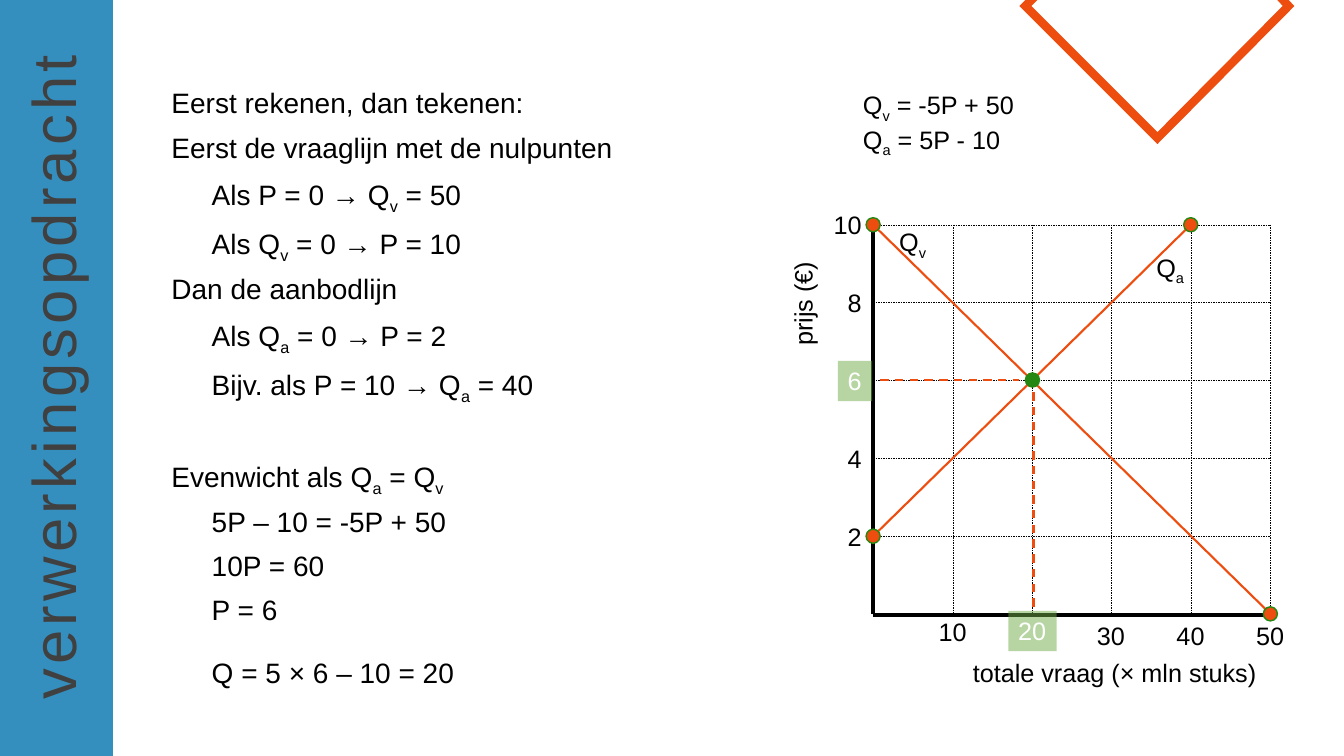
"""Build the slide that works out and draws a market equilibrium."""
from dataclasses import dataclass

from pptx import Presentation
from pptx import util as u
from pptx.dml.color import RGBColor
from pptx.enum import dml, shapes, text
from pptx.oxml.ns import qn
from lxml import etree

PX = 9144


@dataclass(frozen=True)
class Theme:
    """Colours, font and type sizes of the slide."""
    ink: str = "000000"
    title_ink: str = "404040"
    white: str = "FFFFFF"
    sidebar: str = "1A80B6"
    accent: str = "ED4D0F"
    green: str = "258812"
    highlight: str = "70AD47"
    font: str = "Arial"
    title_size: int = 44
    body_size: int = 20
    label_size: int = 18


THEME = Theme()

STEPS = [
    ("Eerst rekenen, dan tekenen:", 0, 10),
    ("Eerst de vraaglijn met de nulpunten", 0, 10),
    ("Als P = 0 → Q_v = 50", 40, 10),
    ("Als Q_v = 0 → P = 10", 40, 10),
    ("Dan de aanbodlijn", 0, 10),
    ("Als Q_a = 0 → P = 2", 40, 10),
    ("Bijv. als P = 10 → Q_a = 40", 40, 10),
    ("Evenwicht als Q_a = Q_v", 0, 41),
    ("5P – 10 = -5P + 50", 40, 10),
    ("10P = 60", 40, 10),
    ("P = 6", 40, 10),
    ("Q = 5 × 6 – 10 = 20", 40, 23),
]
QUANTITY_LABELS = [(10, 607), (30, 610), (40, 610), (50, 610)]
LEFT, BOTTOM = 866, 609


def px(value):
    """Turn px into EMU."""
    return u.Emu(value * PX)


def rgb(colour):
    """Turn a hex string into a colour."""
    return RGBColor.from_string(colour)


def quantity_x(quantity):
    """Return the horizontal place of a quantity."""
    return LEFT + round(quantity * 7.88)


def price_y(price):
    """Return the vertical place of a price."""
    return BOTTOM - round(price * 38.6)


def place(box, left, top, width, height):
    """Move and size a box."""
    box.left, box.top, box.width, box.height = map(px, (left, top, width, height))


def paint(shape, colour, opacity=100):
    """Fill a shape with a colour and drop its shadow."""
    shape.shadow.inherit = False
    shape.fill.solid()
    shape.fill.fore_color.rgb = rgb(colour)
    if opacity < 100:
        tint = shape.element.spPr.find(".//" + qn("a:srgbClr"))
        etree.SubElement(tint, qn("a:alpha")).set("val", str(opacity * 1000))


def add_spans(para, content, size, colour):
    """Write runs; the letter after an underscore becomes a subscript."""
    first, *others = content.split("_")
    pieces = [(first, False)]
    for other in others:
        pieces += [(other[0], True), (other[1:], False)]
    for piece, lowered in pieces:
        if piece:
            span = para.add_run()
            span.text = piece
            span.font.name, span.font.size = THEME.font, u.Pt(size)
            span.font.color.rgb = rgb(colour)
            if lowered:
                span.font._element.set("baseline", "-25000")


def write(box, lines, size=THEME.label_size, colour=THEME.ink, wrap=False):
    """Write left-aligned lines from the top of a box."""
    frame = box.text_frame
    frame.word_wrap = wrap
    frame.auto_size = text.MSO_AUTO_SIZE.NONE
    frame.vertical_anchor = text.MSO_ANCHOR.TOP
    for index, line in enumerate(lines):
        para = frame.add_paragraph() if index else frame.paragraphs[0]
        para.alignment = text.PP_ALIGN.LEFT
        add_spans(para, line, size, colour)
    return frame.paragraphs


def indent(para, margin):
    """Indent a paragraph without a bullet."""
    properties = para._p.get_or_add_pPr()
    properties.set("marL", str(px(margin)))
    properties.set("indent", "0")
    etree.SubElement(properties, qn("a:buNone"))


def add_label(page, content, bounds, rotation=0):
    """Add a one-line label."""
    box = page.shapes.add_textbox(*map(px, bounds))
    box.rotation = rotation
    write(box, [content])


def add_highlight(page, content, bounds):
    """Add a see-through box with a white value."""
    box = page.shapes.add_shape(shapes.MSO_SHAPE.RECTANGLE, *map(px, bounds))
    paint(box, THEME.highlight, 50)
    box.line.fill.background()
    write(box, [content], colour=THEME.white)


def add_line(page, start, end, colour, width, dashed=False):
    """Add a straight line."""
    line = page.shapes.add_connector(shapes.MSO_CONNECTOR.STRAIGHT, *map(px, start + end))
    line.line.color.rgb = rgb(colour)
    line.line.width = u.Pt(width)
    if dashed:
        line.line.dash_style = dml.MSO_LINE.DASH
    etree.SubElement(line.element.spPr, qn("a:effectLst"))


def add_dot(page, quantity, price, colour=THEME.accent):
    """Mark a point of the graph."""
    bounds = (quantity_x(quantity) - 7, price_y(price) - 7, 14, 14)
    dot = page.shapes.add_shape(shapes.MSO_SHAPE.OVAL, *map(px, bounds))
    paint(dot, colour)
    dot.line.color.rgb = rgb(THEME.green)
    dot.line.width = u.Pt(1)


def add_curve(page, start, end):
    """Draw a line between two points of the graph and mark both."""
    ends = [(quantity_x(quantity), price_y(price)) for quantity, price in (start, end)]
    add_line(page, *ends, THEME.accent, 1.5)
    for point in (start, end):
        add_dot(page, *point)


def add_corner(page):
    """Draw the diamond outline that hangs from the top edge."""
    builder = page.shapes.build_freeform(1030, -7, scale=PX)
    builder.add_line_segments([(1017, 6), (1148, 137), (1278, 6), (1266, -7)], close=False)
    corner = builder.convert_to_shape()
    corner.shadow.inherit = False
    corner.fill.background()
    corner.line.color.rgb = rgb(THEME.accent)
    corner.line.width = u.Pt(6)
    etree.SubElement(corner.line._get_or_add_ln(), qn("a:miter")).set("lim", "800000")


def add_title(page):
    """Set the upright title on its coloured sidebar."""
    title = page.shapes.title
    sidebar = page.shapes.add_shape(shapes.MSO_SHAPE.RECTANGLE, *map(px, (0, 0, 112, 750)))
    paint(sidebar, THEME.sidebar, 88)
    sidebar.line.fill.background()
    title.element.addprevious(sidebar.element)
    place(title, -283, 327, 670, 84)
    title.rotation = 270
    para = write(title, ["verwerkingsopdracht"], THEME.title_size, THEME.title_ink)[0]
    para.runs[0].font._element.set("spc", "300")


def add_steps(page):
    """Fill the body with the calculation."""
    body = page.placeholders[1]
    place(body, 160, 84, 608, 637)
    paras = write(body, [line for line, _, _ in STEPS], THEME.body_size, wrap=True)
    for para, (_, margin, gap) in zip(paras, STEPS):
        para.line_spacing = 0.9
        para.space_before = u.Pt(gap)
        indent(para, margin)


def add_grid(page):
    """Draw the axes, the grid and the axis labels."""
    right, top = quantity_x(50), price_y(10)
    add_line(page, (LEFT, top), (LEFT, BOTTOM), THEME.ink, 3)
    for price in range(2, 11, 2):
        y = price_y(price)
        add_line(page, (LEFT, y), (right, y), THEME.ink, 0.25, True)
        if price != 6:
            width = 48 if price == 10 else 34
            add_label(page, str(price), (865 - width, y - 20, width, 40))
    for quantity in range(10, 51, 10):
        x = quantity_x(quantity)
        add_line(page, (x, top), (x, BOTTOM), THEME.ink, 0.25, True)
    for quantity, label_top in QUANTITY_LABELS:
        add_label(page, str(quantity), (quantity_x(quantity) - 24, label_top, 48, 40))
    add_line(page, (1264, 610), (LEFT, 610), THEME.ink, 3)
    add_label(page, "totale vraag (× mln stuks)", (955, 647, 304, 40))
    add_label(page, "prijs (€)", (744, 281, 104, 40), 270)


def main():
    """Build and save the slide."""
    deck = Presentation()
    deck.slide_width, deck.slide_height = px(1333), px(750)
    page = deck.slides.add_slide(deck.slide_layouts[1])
    add_title(page)
    add_steps(page)
    add_corner(page)
    add_grid(page)
    formulas = page.shapes.add_textbox(*map(px, (837, 84, 190, 71)))
    for para in write(formulas, ["Q_v = -5P + 50", "Q_a = 5P - 10"], wrap=True):
        indent(para, 9)
    add_curve(page, (0, 10), (50, 0))
    add_label(page, "Q_v", (882, 220, 48, 40))
    add_curve(page, (40, 10), (0, 2))
    add_label(page, "Q_a", (1137, 245, 49, 40))
    add_dot(page, 20, 6, THEME.green)
    add_line(page, (873, 377), (1011, 377), THEME.accent, 1.5, True)
    add_highlight(page, "6", (831, 358, 34, 40))
    add_line(page, (1025, 602), (1025, 389), THEME.accent, 1.5, True)
    add_highlight(page, "20", (1000, 606, 48, 40))
    deck.save("out.pptx")


if __name__ == "__main__":
    main()
